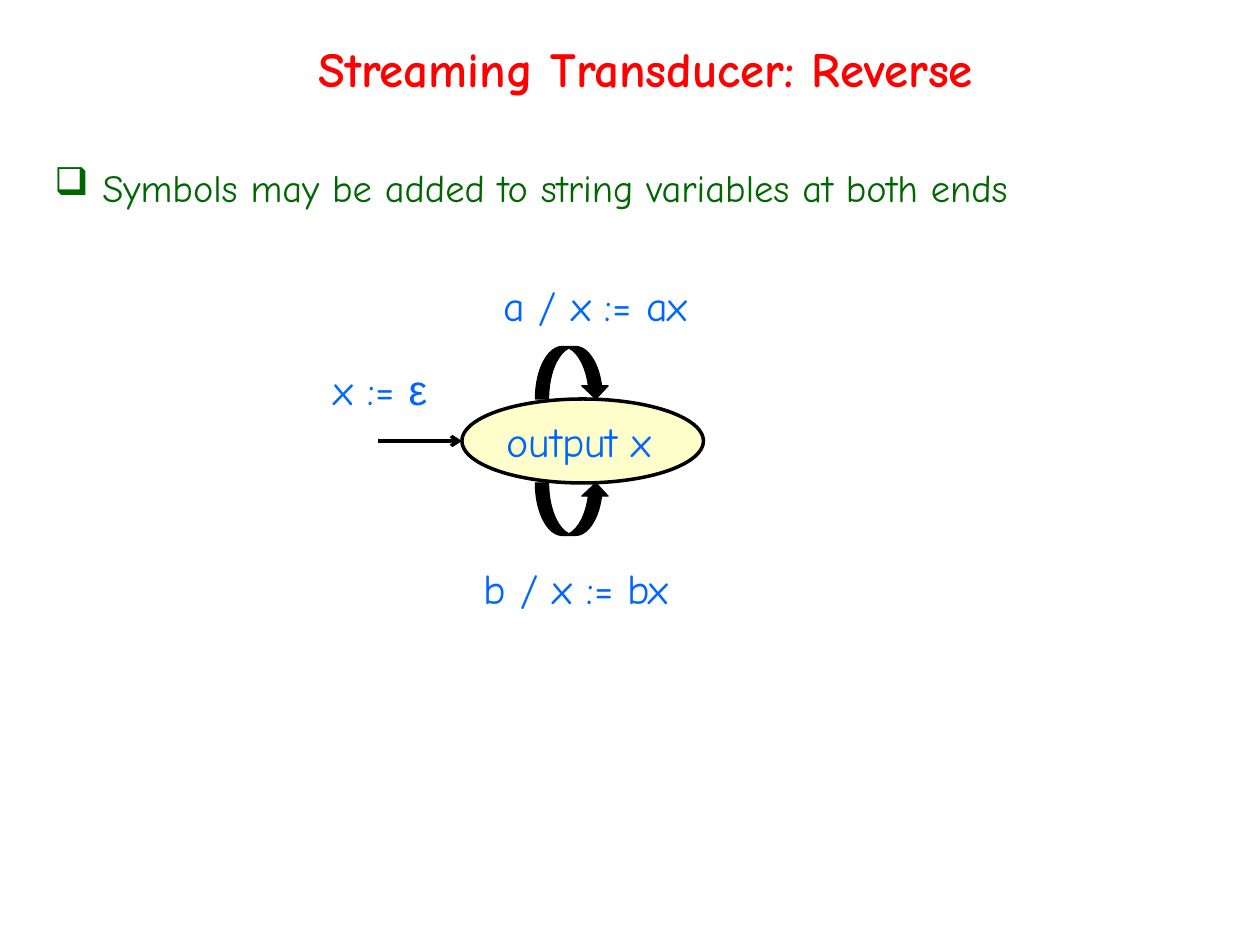
from pptx import Presentation
from pptx.dml.color import RGBColor
from pptx.enum.shapes import MSO_CONNECTOR, MSO_SHAPE
from pptx.enum.text import MSO_ANCHOR, MSO_AUTO_SIZE, PP_ALIGN
from pptx.oxml.ns import qn
from pptx.util import Inches, Pt
from lxml.etree import SubElement

INK, BLUE = "000000", "0066FF"
COLS, ROWS = 120, 90


def color(code):
    """Turn a hex string into a colour."""
    return RGBColor.from_string(code)


def apply(item, values):
    """Set each named attribute of an item."""
    for name, value in values.items():
        setattr(item, name, value)


class Board:
    """Draw styled elements on a slide grid."""

    def __init__(self, deck):
        """Start a blank slide and its grid."""
        self.face = "Comic Neue"
        self.unit = deck.slide_width / COLS
        self.rise = deck.slide_height / ROWS
        self.slide = deck.slides.add_slide(deck.slide_layouts[6])

    def place(self, left, top, width, height):
        """Convert a grid box to lengths."""
        return (round(left * self.unit), round(top * self.rise),
                round(width * self.unit), round(height * self.rise))

    def shape(self, kind, box, fill, weight):
        """Add a filled and outlined shape."""
        item = self.slide.shapes.add_shape(kind, *self.place(*box))
        item.shadow.inherit = False
        item.fill.solid()
        item.fill.fore_color.rgb = color(fill)
        item.line.color.rgb = color(INK)
        item.line.width = Pt(weight)

    def text(self, box, runs, size, ink, bold=False, **form):
        """Add one paragraph of (words, font) runs and return it."""
        frame = self.slide.shapes.add_textbox(*self.place(*box)).text_frame
        apply(frame, {"word_wrap": True, **form})
        para = frame.paragraphs[0]
        para.alignment = PP_ALIGN.CENTER
        for words, face in runs:
            run = para.add_run()
            run.text = words
            apply(run.font, {"name": face or self.face, "size": Pt(size), "bold": bold})
            run.font.color.rgb = color(ink)
        return para

    def title(self, box, words):
        """Add the heading."""
        self.text(box, [(words, None)], 28, "FF0000", True,
                  vertical_anchor=MSO_ANCHOR.MIDDLE)

    def bullet(self, box, words):
        """Add a line with a hanging square bullet."""
        para = self.text(box, [(words, None)], 22, "006600")
        para.alignment = PP_ALIGN.LEFT
        props = para._p.get_or_add_pPr()
        props.set("marL", str(Inches(0.38)))
        props.set("indent", str(-Inches(0.38)))
        SubElement(props, qn("a:buChar"), char="❑")

    def label(self, box, *runs):
        """Add a blue label that does not wrap."""
        self.text(box, runs, 24, BLUE, word_wrap=False,
                  auto_size=MSO_AUTO_SIZE.SHAPE_TO_FIT_TEXT)

    def arrow(self, start, end):
        """Add a straight arrow."""
        ends = self.place(*start, *end)
        item = self.slide.shapes.add_connector(MSO_CONNECTOR.STRAIGHT, *ends)
        item.line.color.rgb = color(INK)
        item.line.width = Pt(2)
        SubElement(item.line._get_or_add_ln(), qn("a:tailEnd"), type="arrow")
        SubElement(item._element.spPr, qn("a:effectLst"))


def main():
    """Build and save the slide."""
    deck = Presentation()
    apply(deck, {"slide_width": Inches(10), "slide_height": Inches(7.5)})
    board = Board(deck)
    board.shape(MSO_SHAPE.OVAL, (44, 38, 23, 8), "FFFFCC", 2)
    board.title((3, 3, 117, 7), "Streaming Transducer: Reverse")
    board.bullet((4, 15, 116, 71), "Symbols may be added to string variables at both ends")
    board.label((46.1, 39, 18.1, 6), ("output x", None))
    board.label((46.1, 26, 21.2, 6), ("a / x := ax", None))
    board.arrow((36, 42), (44, 42))
    board.label((30.2, 34, 12.1, 6), ("x := ", None), ("ε", "Arial"))
    board.label((44, 53, 21.8, 6), ("b / x := bx", None))
    for kind, top in ((MSO_SHAPE.CURVED_UP_ARROW, 46), (MSO_SHAPE.CURVED_DOWN_ARROW, 33)):
        board.shape(kind, (51, top, 7, 5), INK, 0.75)
    deck.save("out.pptx")


if __name__ == "__main__":
    main()
